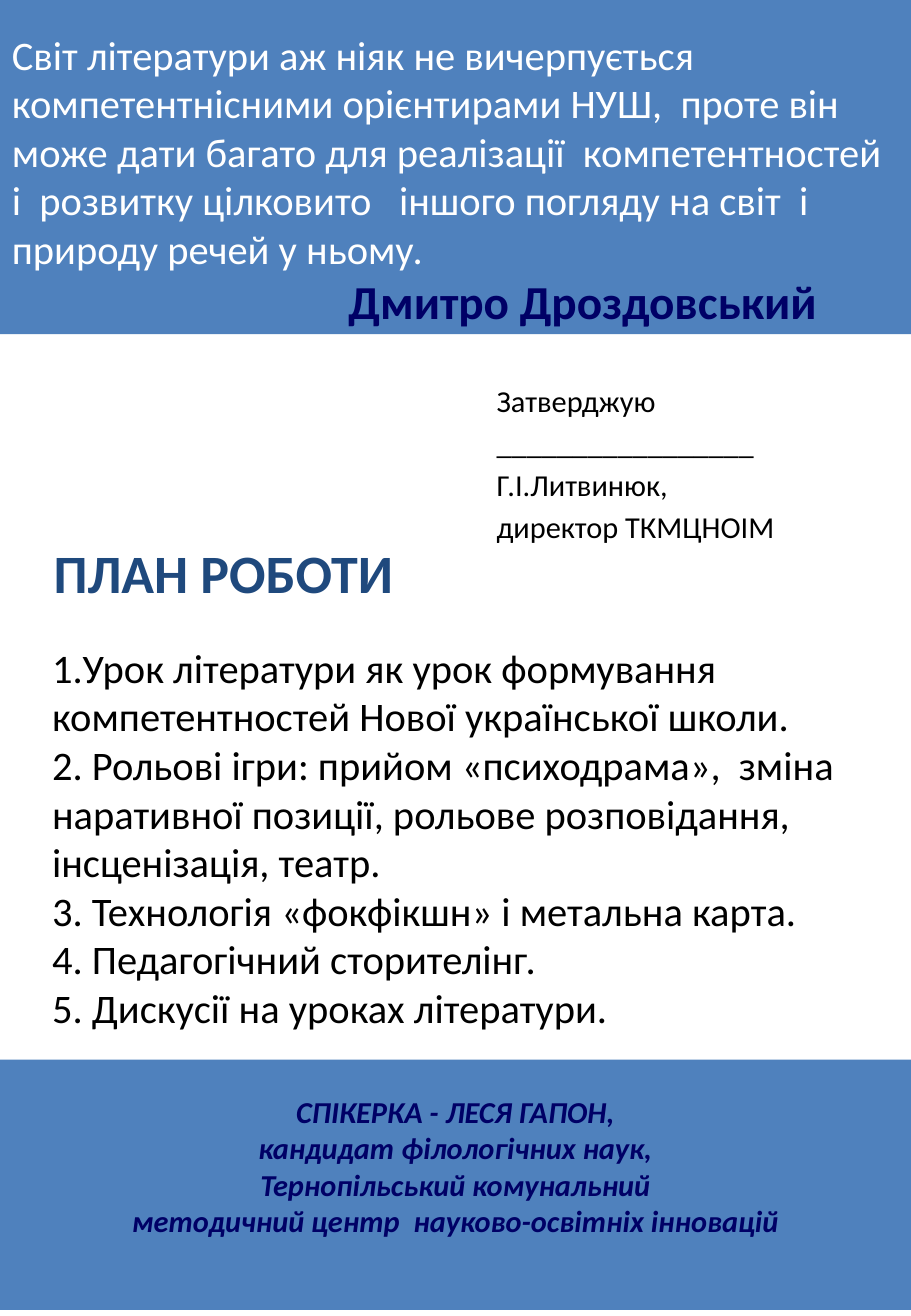
from dataclasses import dataclass

import pptx
import pptx.dml.color
import pptx.enum.shapes
import pptx.enum.text
import pptx.util

Inches = pptx.util.Inches
Align = pptx.enum.text.PP_ALIGN
Anchor = pptx.enum.text.MSO_ANCHOR

COLORS = {
    "band": "4F81BD",
    "navy": "000066",
    "heading": "1F497D",
    "black": "000000",
    "white": "FFFFFF",
}


@dataclass
class Line:
    text: str
    size: int
    color: str = "black"
    bold: bool = False
    italic: bool = False
    align: Align = Align.LEFT
    spacing: float = 1.0
    indent: float = 0.0


@dataclass
class Block:
    left: float
    top: float
    width: float
    height: float
    lines: list[Line]
    fill: str | None = None
    anchor: Anchor = Anchor.TOP
    bottom_inset: float = 0.05
    wrap: bool = True


def rgb(name: str) -> pptx.dml.color.RGBColor:
    return pptx.dml.color.RGBColor.from_string(COLORS[name])


def write_line(paragraph, line: Line) -> None:
    paragraph.text = line.text
    paragraph.alignment = line.align
    paragraph.line_spacing = line.spacing
    if line.indent:
        paragraph._p.get_or_add_pPr().set("marL", str(Inches(line.indent)))
    font = paragraph.font
    font.name = "Calibri"
    font.size = pptx.util.Pt(line.size)
    font.bold = line.bold
    font.italic = line.italic
    font.color.rgb = rgb(line.color)


def draw_block(slide, block: Block) -> None:
    bounds = [Inches(n) for n in (block.left, block.top, block.width, block.height)]
    if block.fill:
        shape = slide.shapes.add_shape(
            pptx.enum.shapes.MSO_SHAPE.RECTANGLE, *bounds)
        shape.shadow.inherit = False
        shape.fill.solid()
        shape.fill.fore_color.rgb = rgb(block.fill)
        shape.line.fill.background()
    else:
        shape = slide.shapes.add_textbox(*bounds)
    frame = shape.text_frame
    frame.word_wrap = block.wrap
    frame.vertical_anchor = block.anchor
    frame.margin_bottom = Inches(block.bottom_inset)
    for index, line in enumerate(block.lines):
        paragraph = frame.add_paragraph() if index else frame.paragraphs[0]
        write_line(paragraph, line)


# Speaker band
speaker = Block(0, 8.72, 7.5, 2.06, [
    Line(text, 18, "navy", bold=True, italic=True, align=Align.CENTER)
    for text in (
        "СПІКЕРКА - ЛЕСЯ ГАПОН,",
        "кандидат філологічних наук,",
        "Тернопільський комунальний",
        "методичний центр  науково-освітніх інновацій",
    )
], fill="band", anchor=Anchor.MIDDLE, bottom_inset=0.36)

# Quotation band with its author
quotation = Block(0, 0, 7.5, 2.75, [
    Line("Світ літератури аж ніяк не вичерпується компетентнісними "
         "орієнтирами НУШ,  проте він може дати багато для реалізації  "
         "компетентностей і  розвитку цілковито   іншого погляду на світ  і "
         "природу речей у ньому.", 24, "white"),
    Line("Дмитро Дроздовський", 28, "navy", bold=True, indent=2.77),
], fill="band", anchor=Anchor.BOTTOM, bottom_inset=0.04)

# Work plan
plan = Block(0.33, 5.24, 6.69, 3.36, [
    Line(text, 24) for text in (
        "1.Урок літератури як урок формування компетентностей Нової "
        "української школи.",
        "2. Рольові ігри: прийом «психодрама»,  зміна наративної позиції, "
        "рольове розповідання, інсценізація, театр.",
        "3. Технологія «фокфікшн» і метальна карта.",
        "4. Педагогічний сторителінг.",
        "5. Дискусії на уроках літератури.",
    )
])
plan_heading = Block(0.33, 4.39, 3.02, 0.64, [
    Line("ПЛАН РОБОТИ", 32, "heading", bold=True, align=Align.CENTER),
], wrap=False)

# Approval by the director
approval = Block(3.99, 3.05, 3.5, 1.49, [
    Line(text, 18, spacing=1.15) for text in (
        "Затверджую",
        "_________________",
        "Г.І.Литвинюк,",
        "директор ТКМЦНОІМ",
    )
])


def main() -> None:
    deck = pptx.Presentation()
    deck.slide_width, deck.slide_height = Inches(7.5), Inches(10.83)
    slide = deck.slides.add_slide(deck.slide_layouts[6])
    for block in (speaker, quotation, plan, plan_heading, approval):
        draw_block(slide, block)
    deck.save("out.pptx")


if __name__ == "__main__":
    main()
